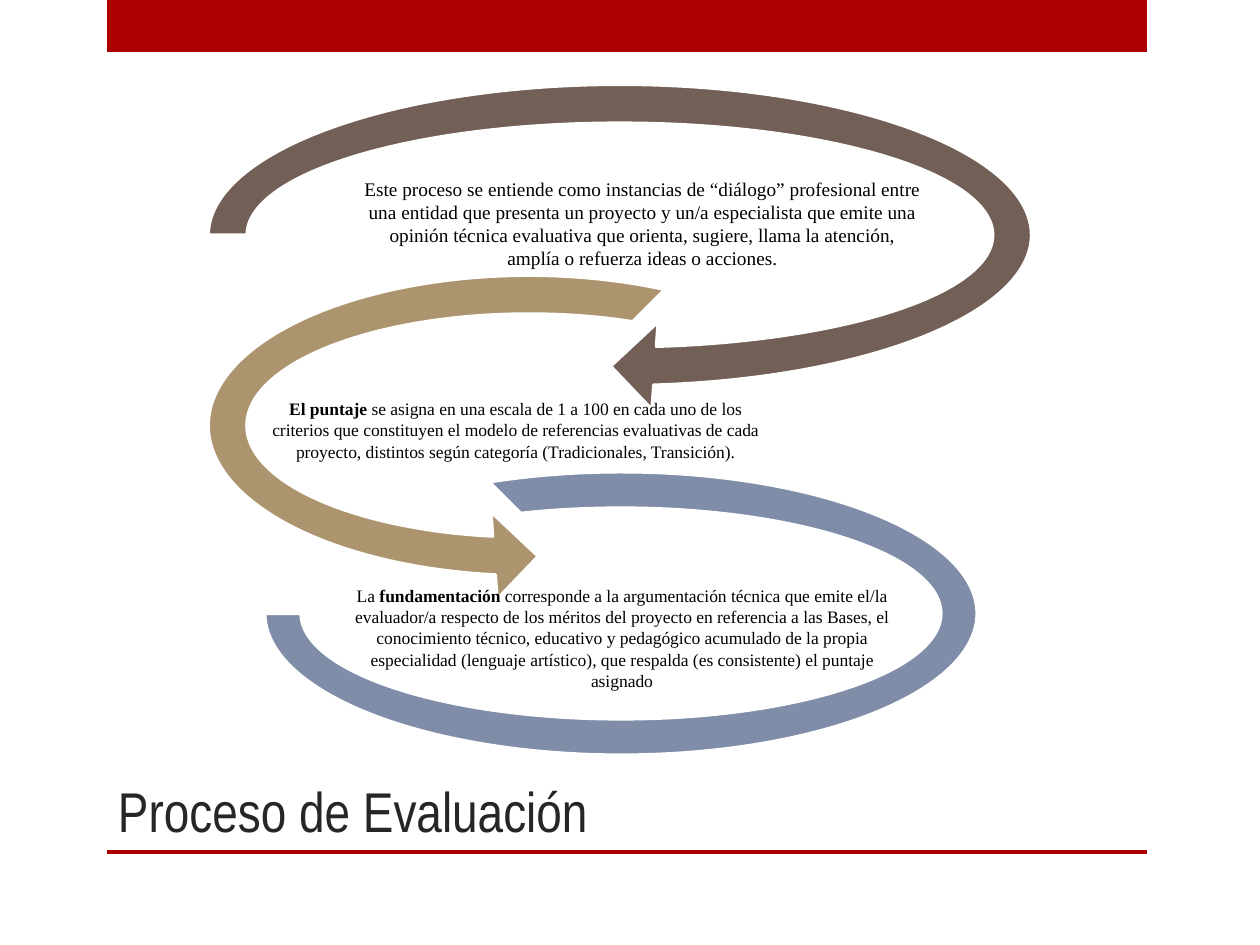
import dataclasses

import pptx
import pptx.dml.color
import pptx.enum.shapes
import pptx.enum.text
import pptx.util

SHAPE = pptx.enum.shapes.MSO_SHAPE
ALIGN = pptx.enum.text.PP_ALIGN
ANCHOR = pptx.enum.text.MSO_ANCHOR
SCALE = 914400 / 126  # EMU in one px


@dataclasses.dataclass(frozen=True)
class Theme:
    red: str = "AD0101"
    brown: str = "726056"
    tan: str = "AC956E"
    blue: str = "808DA9"
    white: str = "FFFFFF"
    ink: str = "000000"
    dark: str = "262626"
    head: str = "Arial Narrow"
    body: str = "Times New Roman"
    title: int = 32
    lead: int = 11
    note: int = 10
    edge: float = 1.75


def emu(px):
    return pptx.util.Emu(round(px * SCALE))


def rgb(code):
    return pptx.dml.color.RGBColor.from_string(code)


def put(item, values):
    for name, value in values.items():
        setattr(item, name, value)


class Page:
    def __init__(self, theme, slide):
        self.theme = theme
        self.slide = slide

    def shape(self, kind, box, fill, adjust=()):
        item = self.slide.shapes.add_shape(kind, *map(emu, box))
        item.shadow.inherit = False
        item.fill.solid()
        item.fill.fore_color.rgb = rgb(fill)
        for i, value in enumerate(adjust):
            item.adjustments[i] = value
        return item

    def bar(self, box):
        self.shape(SHAPE.RECTANGLE, box, self.theme.red).line.fill.background()

    def arc(self, kind, box, fill, adjust):
        item = self.shape(kind, box, fill, adjust)
        item.line.color.rgb = rgb(self.theme.white)
        item.line.width = pptx.util.Pt(self.theme.edge)

    def text(self, box, runs, inset, frame, font, color, align=ALIGN.LEFT):
        """Add a text box; runs are (text, bold), inset is left, top, right, bottom."""
        area = self.slide.shapes.add_textbox(*map(emu, box)).text_frame
        sides = ("margin_left", "margin_top", "margin_right", "margin_bottom")
        put(area, {"word_wrap": True, **frame, **dict(zip(sides, map(emu, inset)))})
        para = area.paragraphs[0]
        para.alignment = align
        for words, bold in runs:
            run = para.add_run()
            run.text = words
            put(run.font, {**font, "bold": bold})
            run.font.color.rgb = rgb(color)

    def title(self, box, words):
        look = self.theme
        font = {"name": look.head, "size": pptx.util.Pt(look.title)}
        self.text(box, [(words, False)], (13, 6, 13, 6),
                  {"vertical_anchor": ANCHOR.BOTTOM}, font, look.dark)

    def note(self, box, runs, size):
        look = self.theme
        font = {"name": look.body, "size": pptx.util.Pt(size)}
        self.text(box, runs, (1, 1, 1, 19),
                  {"vertical_anchor": ANCHOR.MIDDLE}, font, look.ink, ALIGN.CENTER)


def main():
    deck = pptx.Presentation()
    put(deck, {"slide_width": emu(1260), "slide_height": emu(945)})
    look = Theme()
    page = Page(look, deck.slides.add_slide(deck.slide_layouts[6]))

    page.bar((107, 0, 1040, 52))
    page.bar((107, 850, 1040, 4))
    page.title((105, 630, 935, 220), "Proceso de Evaluación")

    page.arc(SHAPE.CIRCULAR_ARROW, (184, 60, 872, 350), look.brown,
             (0.11, 11.42, 45, 108, 0.125))
    page.note((362, 165, 561, 135), [
        ("Este proceso se entiende como instancias de “diálogo” profesional entre "
         "una entidad que presenta un proyecto y un/a especialista que emite una "
         "opinión técnica evaluativa que orienta, sugiere, llama la atención, "
         "amplía o refuerza ideas o acciones.", False)], look.lead)

    page.arc(SHAPE.LEFT_CIRCULAR_ARROW, (184, 251, 690, 349), look.tan,
             (0.11, 11.42, 63, 189, 0.125))
    page.note((263, 393, 505, 92), [
        ("El puntaje", True),
        (" se asigna en una escala de 1 a 100 en cada uno de los criterios que "
         "constituyen el modelo de referencias evaluativas de cada proyecto, "
         "distintos según categoría (Tradicionales, Transición).", False)], look.note)

    page.arc(SHAPE.BLOCK_ARC, (265, 472, 712, 283), look.blue, (135, 108, 0.127))
    page.note((343, 601, 558, 92), [
        ("La ", False),
        ("fundamentación ", True),
        ("corresponde a la argumentación técnica que emite el/la evaluador/a "
         "respecto de los méritos del proyecto en referencia a las Bases, el "
         "conocimiento técnico, educativo y pedagógico acumulado de la propia "
         "especialidad (lenguaje artístico), que respalda (es consistente) el "
         "puntaje asignado", False)], look.note)

    deck.save("out.pptx")


if __name__ == "__main__":
    main()
